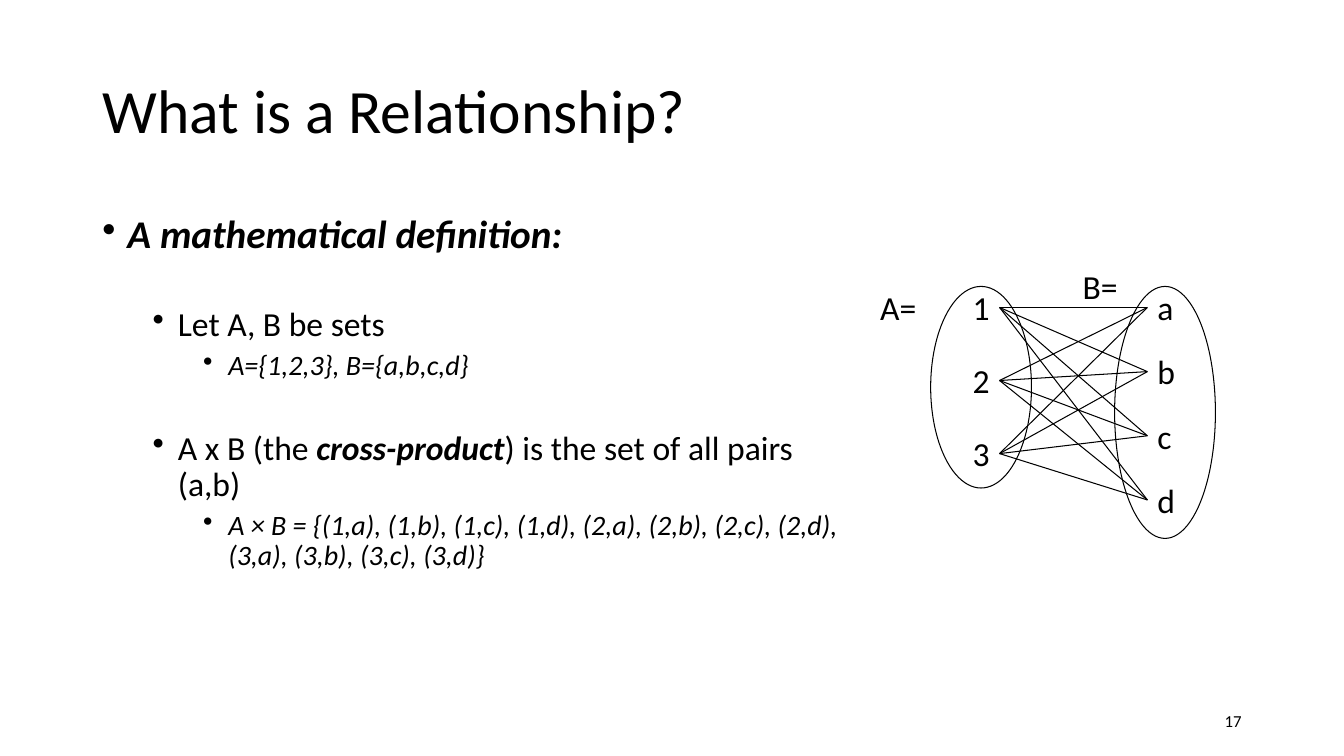
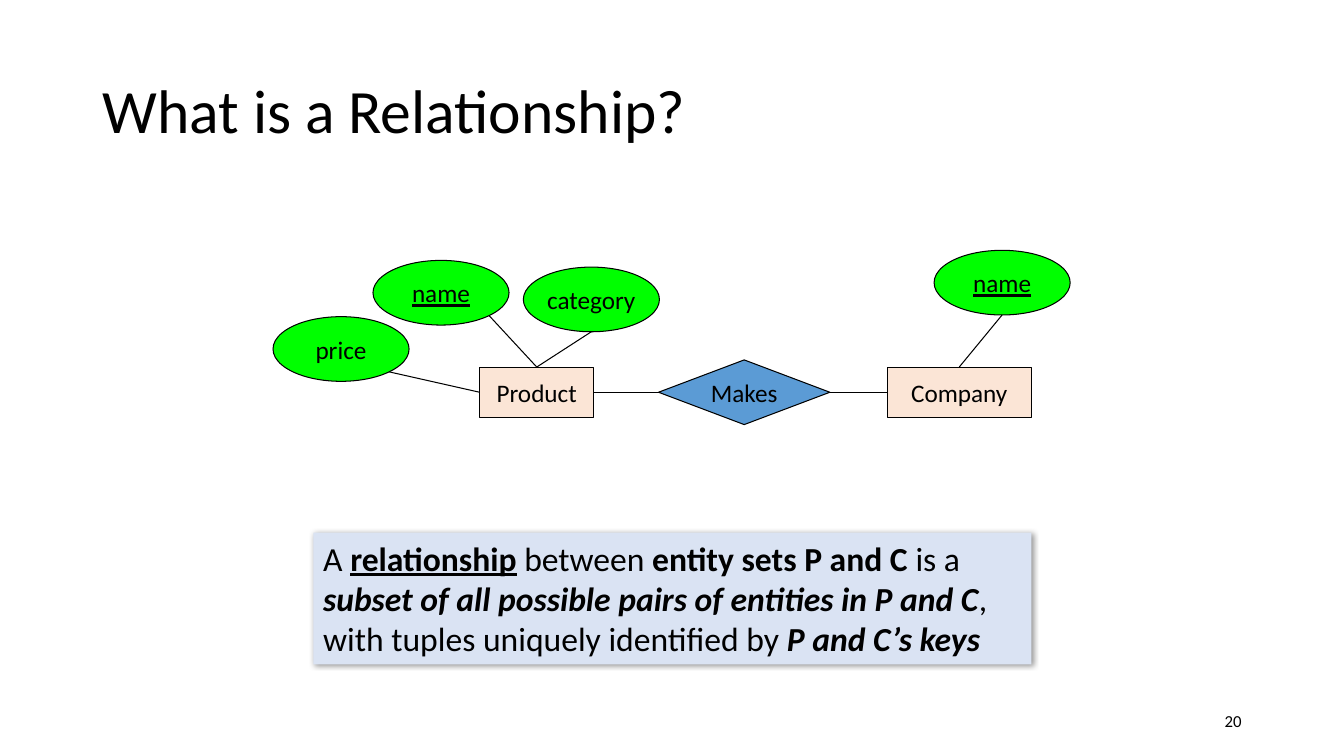
from dataclasses import dataclass
from itertools import product
from math import cos, pi, sin

from lxml import etree
from pptx import Presentation
from pptx.dml.color import RGBColor
from pptx.enum.shapes import MSO_CONNECTOR, MSO_SHAPE
from pptx.enum.text import MSO_ANCHOR, MSO_AUTO_SIZE, PP_ALIGN
from pptx.oxml.ns import qn
from pptx.util import Inches, Pt

OVAL, RECT, DIAMOND = MSO_SHAPE.OVAL, MSO_SHAPE.RECTANGLE, MSO_SHAPE.DIAMOND
STRAIGHT = MSO_CONNECTOR.STRAIGHT
LEFT, CENTER, RIGHT = PP_ALIGN.LEFT, PP_ALIGN.CENTER, PP_ALIGN.RIGHT
TOP, MIDDLE = MSO_ANCHOR.TOP, MSO_ANCHOR.MIDDLE
NORTH, WEST, EAST = 0, 1, 3
COLS, ROWS = 160, 90
STYLES = {"b": "bold", "i": "italic", "u": "underline"}


@dataclass(frozen=True)
class Theme:
    font: str = "Calibri"
    ink: str = "000000"
    key: str = "00FF00"
    entity: str = "FBE5D6"
    bond: str = "5B9BD5"
    note: str = "DAE3F3"
    title: int = 44
    levels: tuple = (28, 24, 20)
    text: int = 24
    label: int = 18
    small: int = 12
    line: float = 0.75
    tight: float = 0.9


class Deck:
    """Draws on the current slide; lengths are columns and rows of the grid."""

    def __init__(self, theme):
        self.theme = theme
        self.show = Presentation()
        self.show.slide_width = Inches(13.333)
        self.show.slide_height = Inches(7.5)
        self.col = self.show.slide_width / COLS
        self.row = self.show.slide_height / ROWS

    def area(self, x, y, w, h):
        return [round(n) for n in (x * self.col, y * self.row, w * self.col, h * self.row)]

    def page(self, title, number):
        layout = self.show.slide_layouts.get_by_name("Title Only")
        self.shapes = self.show.slides.add_slide(layout).shapes
        head = self.shapes.title
        head.left, head.top, head.width, head.height = self.area(11, 4.8, 138, 17.4)
        self.put(head, [(title, "")], self.theme.title, anchor=MIDDLE)
        head.text_frame.paragraphs[0].line_spacing = self.theme.tight
        self.text([(number, "")], 113, 83.4, 36, 4.8, self.theme.small,
                  align=RIGHT, anchor=MIDDLE)

    def runs(self, para, parts, size):
        """Add (text, style letters) pairs to a paragraph."""
        for words, marks in parts:
            run = para.add_run()
            run.text = words
            look = {"name": self.theme.font, "size": Pt(size)}
            look.update({name: mark in marks for mark, name in STYLES.items()})
            for name, value in look.items():
                setattr(run.font, name, value)
            run.font.color.rgb = RGBColor.from_string(self.theme.ink)

    def put(self, shape, parts, size, align=LEFT, anchor=TOP, wrap=True):
        """Set one paragraph of text in a shape."""
        frame = shape.text_frame
        look = {"word_wrap": wrap, "auto_size": MSO_AUTO_SIZE.NONE,
                "vertical_anchor": anchor}
        for name, value in look.items():
            setattr(frame, name, value)
        para = frame.paragraphs[0]
        para.alignment = align
        self.runs(para, parts, size)

    def text(self, parts, x, y, w, h, size, **look):
        box = self.shapes.add_textbox(*self.area(x, y, w, h))
        self.put(box, parts, size, **look)
        return box

    def bullets(self, items, x, y, w, h):
        """Items are (level, space before in points, parts)."""
        frame = self.shapes.add_textbox(*self.area(x, y, w, h)).text_frame
        frame.word_wrap = True
        for i, (level, gap, parts) in enumerate(items):
            para = frame.add_paragraph() if i else frame.paragraphs[0]
            look = {"level": level, "space_before": Pt(gap),
                    "line_spacing": self.theme.tight}
            for name, value in look.items():
                setattr(para, name, value)
            self.runs(para, parts, self.theme.levels[level])
            props = para._p.get_or_add_pPr()
            props.set("marL", str(round((3 + 6 * level) * self.col)))
            props.set("indent", str(round(-3 * self.col)))
            etree.SubElement(props, qn("a:buChar"), char="•")

    def shape(self, kind, x, y, w, h, fill=None, line=True):
        item = self.shapes.add_shape(kind, *self.area(x, y, w, h))
        item.shadow.inherit = False
        if fill:
            item.fill.solid()
            item.fill.fore_color.rgb = RGBColor.from_string(fill)
        else:
            item.fill.background()
        if line:
            self.stroke(item)
        else:
            item.line.fill.background()
        return item

    def stroke(self, item):
        item.line.color.rgb = RGBColor.from_string(self.theme.ink)
        item.line.width = Pt(self.theme.line)

    def node(self, kind, words, x, y, w, h, fill, marks=""):
        item = self.shape(kind, x, y, w, h, fill)
        self.put(item, [(words, marks)], self.theme.label, CENTER, MIDDLE, False)
        return item

    def key(self, words, x, y, goal, side, turn, marks=""):
        """Draw an attribute and its line, leaving the rim at the given angle."""
        oval = self.node(OVAL, words, x, y, 16.2, 7.7, self.theme.key, marks)
        rx, ry = oval.width / 2, oval.height / 2
        point = (round(oval.left + rx + rx * cos(turn)),
                 round(oval.top + ry + ry * sin(turn)))
        self.link(goal, side, point=point)

    def link(self, goal, side, start=None, point=(0, 0)):
        """Join a side of goal to the right side of start, or to a point."""
        line = self.shapes.add_connector(STRAIGHT, *point, *point)
        if start is not None:
            line.begin_connect(start, EAST)
        line.end_connect(goal, side)
        self.stroke(line)
        etree.SubElement(line._element.spPr, qn("a:effectLst"))

    def note(self, parts, x, y, w, h):
        item = self.shape(RECT, x, y, w, h, self.theme.note, line=False)
        self.put(item, parts, self.theme.text)
        effects = item._element.spPr.find(qn("a:effectLst"))
        shade = etree.SubElement(effects, qn("a:outerShdw"), blurRad=str(Pt(4)),
                                 dist=str(Pt(1)), dir="2700000", rotWithShape="0")
        tone = etree.SubElement(shade, qn("a:srgbClr"), val=self.theme.ink)
        etree.SubElement(tone, qn("a:alpha"), val="40000")

    def members(self, names, x, step):
        return [self.text([(name, "")], x, 33.6 + i * step, 4.4, 6,
                          self.theme.text, wrap=False)
                for i, name in enumerate(names)]


def sets(deck):
    deck.page("What is a Relationship?", "17")
    deck.bullets([
        (0, 10, [("A mathematical definition:", "bi")]),
        (1, 36, [("Let A, B be sets", "")]),
        (2, 5, [("A={1,2,3}, B={a,b,c,d}", "i")]),
        (1, 36, [("A x B (the ", ""), ("cross-product", "bi"),
                 (") is the set of all pairs (a,b)", "")]),
        (2, 5, [("A × B = {(1,a), (1,b), (1,c), (1,d), (2,a), (2,b), (2,c), (2,d), "
                 "(3,a), (3,b), (3,c), (3,d)}", "i")]),
    ], 11, 25, 91.2, 54)
    first = deck.members("123", 114.6, 8.7)
    second = deck.members("abcd", 136.6, 7.64)
    for x, h in ((110.8, 24), (132.7, 30)):
        deck.shape(OVAL, x, 34.1, 12, h)
    for name, x, y in (("A=", 103.6, 33.6), ("B=", 127.7, 31.1)):
        deck.text([(name, "")], x, y, 7.4, 6, deck.theme.text, wrap=False)
    for start, goal in product(first, second):
        deck.link(goal, WEST, start)


def model(deck):
    theme = deck.theme
    deck.page("What is a Relationship?", "20")
    makes = deck.node(DIAMOND, "Makes", 78.4, 42.85, 20.4, 7.7, theme.bond)
    item = deck.node(RECT, "Product", 57.1, 43.7, 13.6, 6, theme.entity)
    firm = deck.node(RECT, "Company", 105.6, 43.7, 17.2, 6, theme.entity)
    deck.key("name", 44.4, 31, item, NORTH, pi / 4, "u")
    deck.key("category", 62.3, 31.8, item, NORTH, pi / 2)
    deck.key("price", 32.5, 37.7, item, WEST, pi / 4)
    deck.key("name", 111.2, 29.8, firm, NORTH, pi / 2, "u")
    deck.link(makes, WEST, item)
    deck.link(firm, WEST, makes)
    deck.note([("A ", ""), ("relationship", "bu"), (" between ", ""),
               ("entity sets P and C ", "b"), ("is a ", ""),
               ("subset of all possible pairs of entities in P and C", "bi"),
               (", with tuples uniquely identified by ", ""),
               ("P and C’s keys", "bi")], 37.3, 63.4, 85.5, 15.7)


def main():
    deck = Deck(Theme())
    sets(deck)
    model(deck)
    deck.show.save("out.pptx")


if __name__ == "__main__":
    main()
